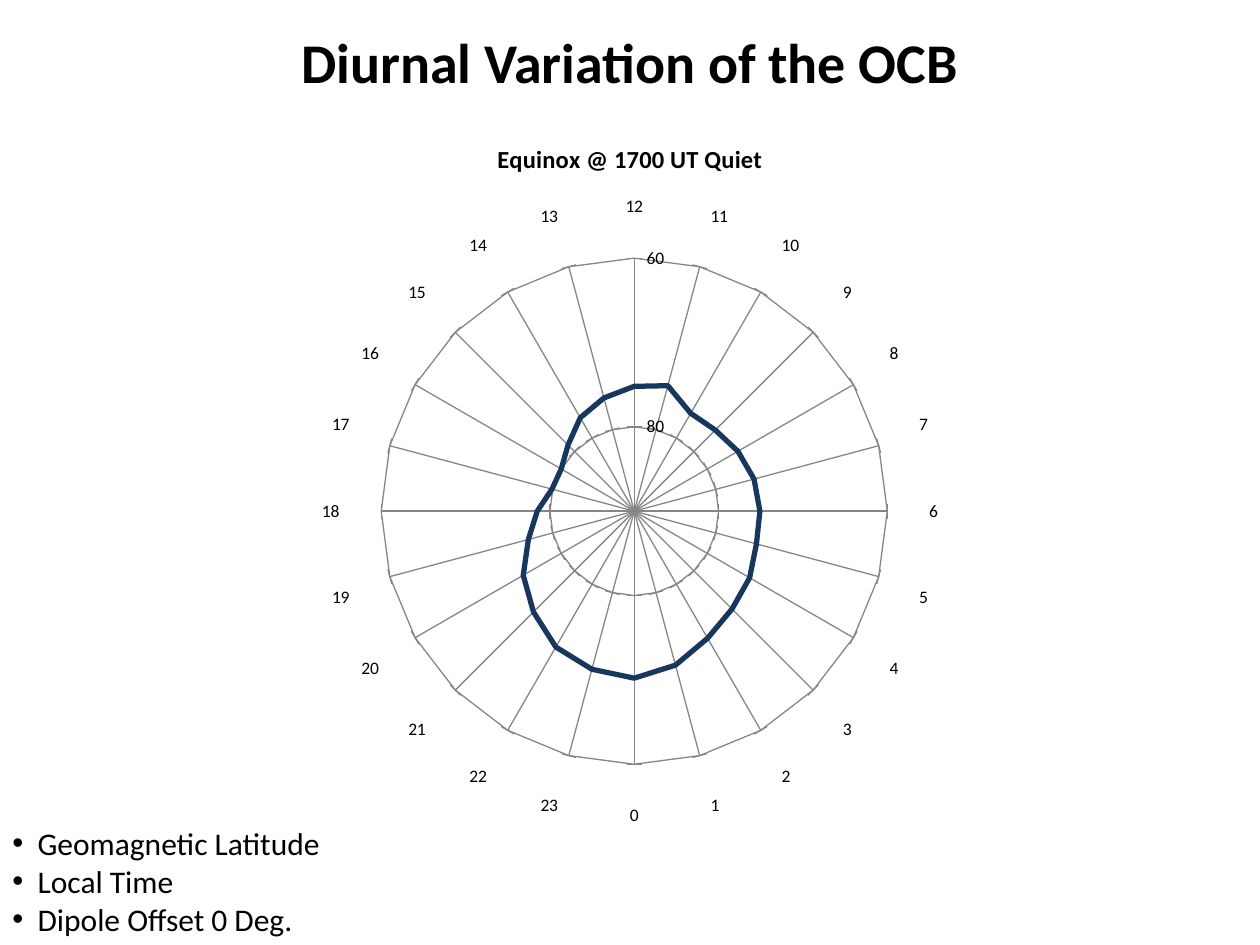
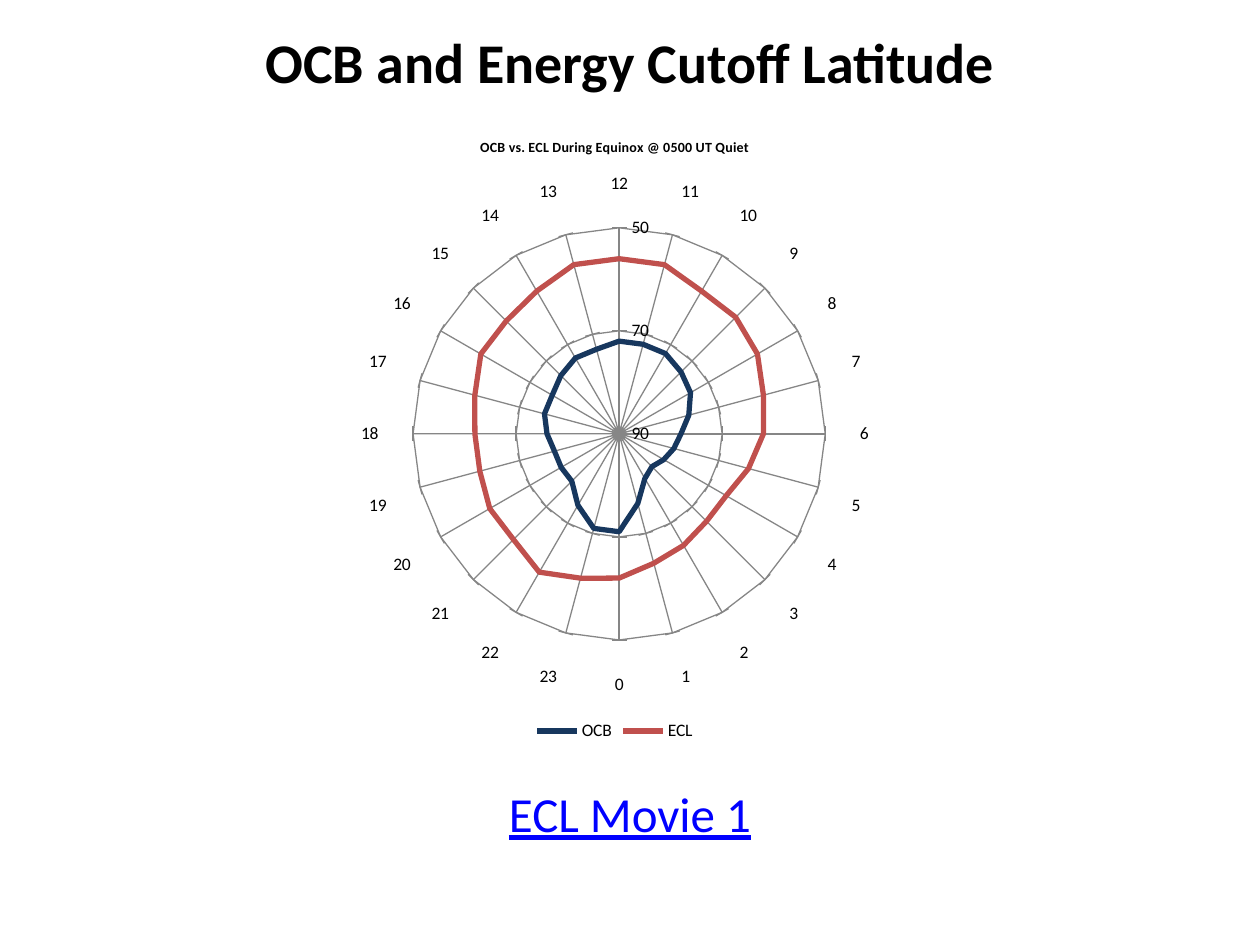
from lxml.etree import SubElement
from pptx import Presentation
from pptx.chart.data import CategoryChartData
from pptx.dml.color import RGBColor
from pptx.enum.chart import XL_CHART_TYPE, XL_LEGEND_POSITION, XL_TICK_MARK
from pptx.enum.text import PP_ALIGN
from pptx.oxml.ns import qn
from pptx.util import Inches, Pt

FONT = "Calibri"
COLOURS = {"text": "000000", "link": "0000FF", "grid": "868686",
           "ocb": "17375E", "ecl": "C0504D"}

# Local time runs anticlockwise from noon at the top of the dial
HOURS = [str((12 - step) % 24) for step in range(24)]

OCB_1700 = [75.2, 74.6, 76.6, 76.4, 75.8, 75.3, 75.1, 75, 74.2, 73.6, 72.6, 71.1,
            70.2, 70.6, 71.4, 73.1, 74.8, 77, 78.5, 79.9, 80, 78.9, 77.2, 76.1]
OCB_0500 = [72, 72, 72, 73, 74, 76, 78, 79, 80, 81, 80, 76,
            71, 71, 74, 77, 77, 77, 76, 75, 75, 74, 73, 73]
ECL_0500 = [56, 56, 58, 58, 59, 61, 62, 64, 66, 66, 65, 64,
            62, 61, 59, 61, 61, 62, 62, 61, 59, 59, 58, 56]


def colour(name):
    return RGBColor.from_string(COLOURS[name])


def style_font(font, size, bold=False, underline=False, ink="text"):
    font.name = FONT
    font.size = Pt(size)
    font.bold = bold
    font.underline = underline
    font.color.rgb = colour(ink)


def style_line(line, ink, width):
    line.color.rgb = colour(ink)
    line.width = Pt(width)


def add_bullet(para):
    properties = para._p.get_or_add_pPr()
    properties.set("marL", str(Inches(0.2)))
    properties.set("indent", str(-Inches(0.2)))
    SubElement(properties, qn("a:buFont"), typeface="Arial")
    SubElement(properties, qn("a:buChar"), char="•")


def add_text(page, text, left, top, width, height, align=PP_ALIGN.LEFT,
             bullets=False, **font_format):
    """Add a text box with one paragraph for each line of text."""
    box = page.shapes.add_textbox(Inches(left), Inches(top), Inches(width), Inches(height))
    frame = box.text_frame
    frame.word_wrap = True
    frame.text = text
    for para in frame.paragraphs:
        para.alignment = align
        if bullets:
            add_bullet(para)
        for span in para.runs:
            style_font(span.font, **font_format)


def add_title(page, text):
    add_text(page, text, 0, 0.17, 10, 0.64, align=PP_ALIGN.CENTER, size=32, bold=True)


def add_latitude_dial(page, title, title_size, series, outer_latitude,
                      left, top, width, height, legend=False):
    """Add a radar chart of latitude by hour, with the pole (90) at its centre.

    series holds (name, colour name, values) for each curve.
    """
    data = CategoryChartData()
    data.categories = HOURS
    for name, _, values in series:
        data.add_series(name, values)
    chart = page.shapes.add_chart(XL_CHART_TYPE.RADAR, Inches(left), Inches(top),
                                  Inches(width), Inches(height), data).chart
    style_font(chart.font, 10)

    chart.has_title = True
    chart.chart_title.include_in_layout = False
    chart.chart_title.text_frame.text = title
    style_font(chart.chart_title.text_frame.paragraphs[0].runs[0].font,
               title_size, bold=True)

    chart.has_legend = legend
    if legend:
        chart.legend.position = XL_LEGEND_POSITION.BOTTOM
        chart.legend.include_in_layout = False

    latitude = chart.value_axis
    latitude.minimum_scale = outer_latitude
    latitude.maximum_scale = 90
    latitude.major_unit = 20
    latitude.reverse_order = True
    latitude.tick_labels.number_format = "General"
    latitude.tick_labels.number_format_is_linked = False
    for axis in (latitude, chart.category_axis):
        axis.major_tick_mark = XL_TICK_MARK.CROSS
        axis.has_major_gridlines = True
        style_line(axis.major_gridlines.format.line, "grid", 0.75)
        style_line(axis.format.line, "grid", 0.75)

    for curve, (_, ink, _) in zip(chart.plots[0].series, series):
        curve.smooth = False
        style_line(curve.format.line, ink, 3)


def build_diurnal_page(page):
    add_title(page, "Diurnal Variation of the OCB")
    add_latitude_dial(page, "Equinox @ 1700 UT Quiet", 14,
                      [("Series 1", "ocb", OCB_1700)], 60, 1, 0.92, 8, 5.75)
    add_text(page, "Geomagnetic Latitude\nLocal Time\nDipole Offset 0 Deg.",
             0, 6.49, 2.68, 1.01, bullets=True, size=18)


def build_cutoff_page(page):
    add_latitude_dial(page, "OCB vs. ECL During Equinox @ 0500 UT Quiet", 8,
                      [("OCB", "ocb", OCB_0500), ("ECL", "ecl", ECL_0500)],
                      50, 1.42, 0.92, 6.92, 5, legend=True)
    add_title(page, "OCB and Energy Cutoff Latitude")
    add_text(page, "ECL Movie 1", 0, 6.17, 10, 0.57, align=PP_ALIGN.CENTER,
             size=28, underline=True, ink="link")


def main():
    deck = Presentation()
    deck.slide_width, deck.slide_height = Inches(10), Inches(7.5)
    for build_page in (build_diurnal_page, build_cutoff_page):
        build_page(deck.slides.add_slide(deck.slide_layouts[6]))
    deck.save("out.pptx")


if __name__ == "__main__":
    main()
